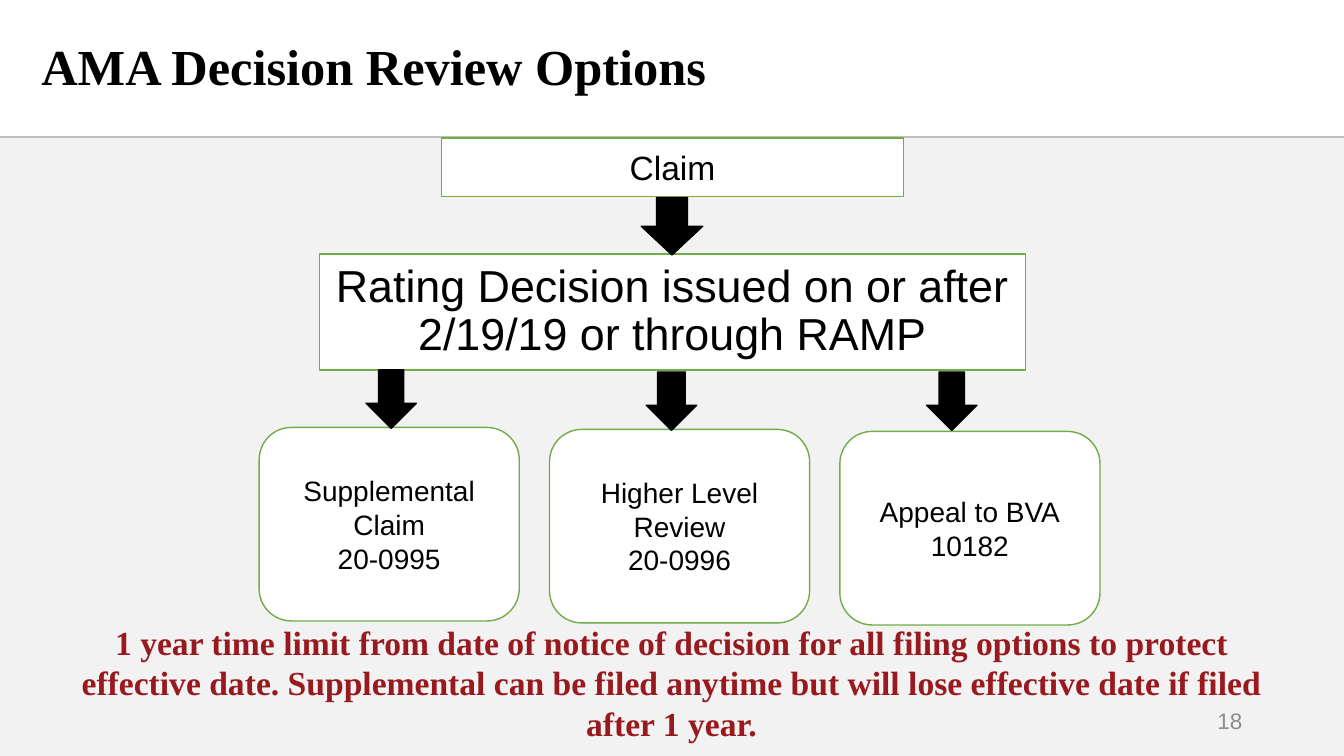
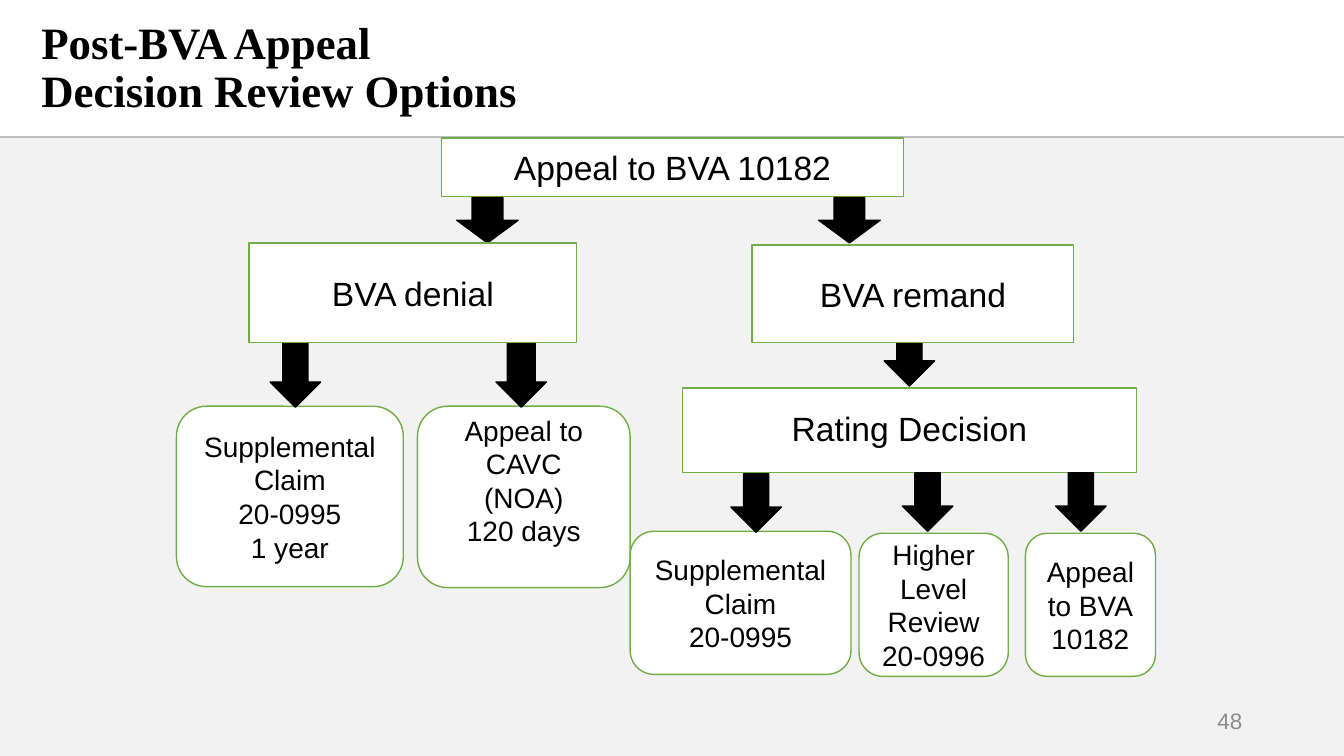
from dataclasses import dataclass

from lxml import etree
from pptx import Presentation
from pptx.dml.color import RGBColor
from pptx.enum.shapes import MSO_CONNECTOR as Connector, MSO_SHAPE as Preset
from pptx.enum.text import MSO_ANCHOR as Anchor, MSO_AUTO_SIZE as AutoSize, PP_ALIGN as Align
from pptx.oxml.ns import qn
from pptx.util import Inches, Pt

# Shared style
WIDTH, HEIGHT = 13.33, 7.5
BAND_TOP = 1.37
SANS, SERIF = "Arial", "Times New Roman"
BLACK, WHITE, GREEN = "000000", "FFFFFF", "70AD47"
BAND_GRAY, RULE_GRAY, NUMBER_GRAY, RED = "F2F2F2", "BFBFBF", "8C8C8C", "991A1E"


@dataclass
class Box:
    left: float
    top: float
    width: float
    height: float
    lines: tuple[str, ...]
    size: int = 24
    rounded: bool = False
    line_spacing: float = 1.0
    bottom_inset: float = 0.05


@dataclass
class Arrow:
    left: float
    top: float
    width: float = 0.5
    height: float = 0.58
    shaft: float = 0.5


@dataclass
class FlowSlide:
    title: str
    title_size: int
    number: str
    figures: list[Box | Arrow]
    note: str = ""


def color(value: str) -> RGBColor:
    return RGBColor.from_string(value)


def place(figure: Box | Arrow) -> tuple:
    return tuple(Inches(length)
                 for length in (figure.left, figure.top, figure.width, figure.height))


def write(frame, lines, size, name=SANS, text_color=BLACK, bold=False,
          align=Align.CENTER, anchor=Anchor.MIDDLE, spacing=1.0) -> None:
    """Fill a text frame with evenly formatted paragraphs."""
    frame.word_wrap = True
    frame.auto_size = AutoSize.NONE
    frame.vertical_anchor = anchor
    for index, line in enumerate(lines):
        paragraph = frame.add_paragraph() if index else frame.paragraphs[0]
        paragraph.text = line
        paragraph.alignment = align
        paragraph.line_spacing = spacing
        font = paragraph.font
        font.name, font.size, font.bold = name, Pt(size), bold
        font.color.rgb = color(text_color)


def add_preset(slide, preset, figure: Box | Arrow, fill: str, outline: str):
    shape = slide.shapes.add_shape(preset, *place(figure))
    shape.shadow.inherit = False
    shape.fill.solid()
    shape.fill.fore_color.rgb = color(fill)
    shape.line.color.rgb = color(outline)
    shape.line.width = Pt(1)
    return shape


def add_box(slide, box: Box) -> None:
    preset = Preset.ROUNDED_RECTANGLE if box.rounded else Preset.RECTANGLE
    frame = add_preset(slide, preset, box, WHITE, GREEN).text_frame
    write(frame, box.lines, box.size, spacing=box.line_spacing)
    frame.margin_bottom = Inches(box.bottom_inset)


def add_arrow(slide, arrow: Arrow) -> None:
    shape = add_preset(slide, Preset.DOWN_ARROW, arrow, BLACK, BLACK)
    shape.adjustments[0] = arrow.shaft


def add_frame(slide, flow: FlowSlide) -> None:
    """Draw the title, gray band, rule and slide number."""
    title = slide.shapes.title
    title.left, title.top = Inches(0.31), Inches(0.15)
    title.width, title.height = Inches(9.24), Inches(1.07)
    write(title.text_frame, [flow.title], flow.title_size, SERIF, bold=True,
          align=Align.LEFT, spacing=0.9)

    band = add_preset(slide, Preset.RECTANGLE,
                      Box(0, BAND_TOP, WIDTH, HEIGHT - BAND_TOP, ()), BAND_GRAY, BAND_GRAY)
    band.line.fill.background()
    rule = slide.shapes.add_connector(Connector.STRAIGHT, 0, Inches(1.36),
                                      Inches(WIDTH), Inches(1.36))
    rule.line.color.rgb = color(RULE_GRAY)
    rule.line.width = Pt(1.5)
    etree.SubElement(rule.element.spPr, qn("a:effectLst"))

    number = slide.shapes.add_textbox(Inches(9.42), Inches(6.95), Inches(3), Inches(0.4))
    write(number.text_frame, [flow.number], 16, text_color=NUMBER_GRAY, align=Align.RIGHT)


def add_flow_slide(presentation, flow: FlowSlide) -> None:
    slide = presentation.slides.add_slide(presentation.slide_layouts[5])
    add_frame(slide, flow)
    for figure in flow.figures:
        if isinstance(figure, Box):
            add_box(slide, figure)
        else:
            add_arrow(slide, figure)
    if flow.note:
        note = slide.shapes.add_textbox(Inches(0.62), Inches(6.12), Inches(12.08), Inches(1.31))
        write(note.text_frame, [flow.note], 24, SERIF, RED, bold=True, anchor=Anchor.TOP)


def top_box(text: str) -> Box:
    return Box(4.38, BAND_TOP, 4.58, 0.58, (text,))


def option(left: float, top: float, width: float, height: float, *lines: str,
           bottom_inset: float = 0.05) -> Box:
    return Box(left, top, width, height, lines, 20, True, bottom_inset=bottom_inset)


# Wording of the three review options, used on both slides
SUPPLEMENTAL = ("Supplemental Claim", "20-0995")
HIGHER_LEVEL = ("Higher Level Review", "20-0996")
BOARD_APPEAL = ("Appeal to BVA", "10182")
OPTIONS = (SUPPLEMENTAL, HIGHER_LEVEL, BOARD_APPEAL)

FLOWS = [
    FlowSlide(
        "AMA Decision Review Options", 36, "18",
        [
            top_box("Claim"),
            Box(3.17, 2.52, 7, 1.15,
                ("Rating Decision issued on or after 2/19/19 or through RAMP",),
                32, line_spacing=0.9),
            *(option(2.57 + 2.88 * column, 4.24 + 0.02 * column, 2.58, 1.92, *lines)
              for column, lines in enumerate(OPTIONS)),
            Arrow(3.63, 3.67),
            Arrow(6.41, 3.69, shaft=0.55),
            Arrow(9.19, 3.69),
            Arrow(6.36, 1.96, 0.61, 0.57),
        ],
        "1 year time limit from date of notice of decision for all filing options to "
        "protect effective date. Supplemental can be filed anytime but will lose "
        "effective date if filed after 1 year.",
    ),
    FlowSlide(
        "Post-BVA Appeal\nDecision Review Options", 32, "48",
        [
            top_box("Appeal to BVA 10182"),
            # Options after a denial
            option(1.75, 4.03, 2.25, 1.79, *SUPPLEMENTAL, "1 year"),
            option(4.14, 4.03, 2.11, 1.8, "Appeal to CAVC", "(NOA)", "120 days",
                   bottom_inset=0.38),
            Arrow(2.68, 3.21, height=0.83),
            Arrow(4.92, 3.21, height=0.83, shaft=0.55),
            # Board outcomes
            Arrow(8.77, 3.25),
            Arrow(4.53, 1.96, 0.61, 0.45),
            Arrow(8.12, 1.96, 0.61, 0.45),
            Box(2.47, 2.41, 3.25, 0.99, ("BVA denial",)),
            Box(7.46, 2.43, 3.19, 0.97, ("BVA remand",)),
            # Options after a remand
            Box(6.77, 3.85, 4.5, 0.84, ("Rating Decision",), line_spacing=0.9),
            option(6.25, 5.27, 2.19, 1.42, *SUPPLEMENTAL),
            option(8.52, 5.29, 1.48, 1.42, *HIGHER_LEVEL),
            option(10.17, 5.29, 1.29, 1.42, *BOARD_APPEAL),
            Arrow(7.25, 4.7),
            Arrow(8.95, 4.69),
            Arrow(10.47, 4.69),
        ],
    ),
]


def main() -> None:
    presentation = Presentation()
    presentation.slide_width, presentation.slide_height = Inches(WIDTH), Inches(HEIGHT)
    for flow in FLOWS:
        add_flow_slide(presentation, flow)
    presentation.save("out.pptx")


if __name__ == "__main__":
    main()
